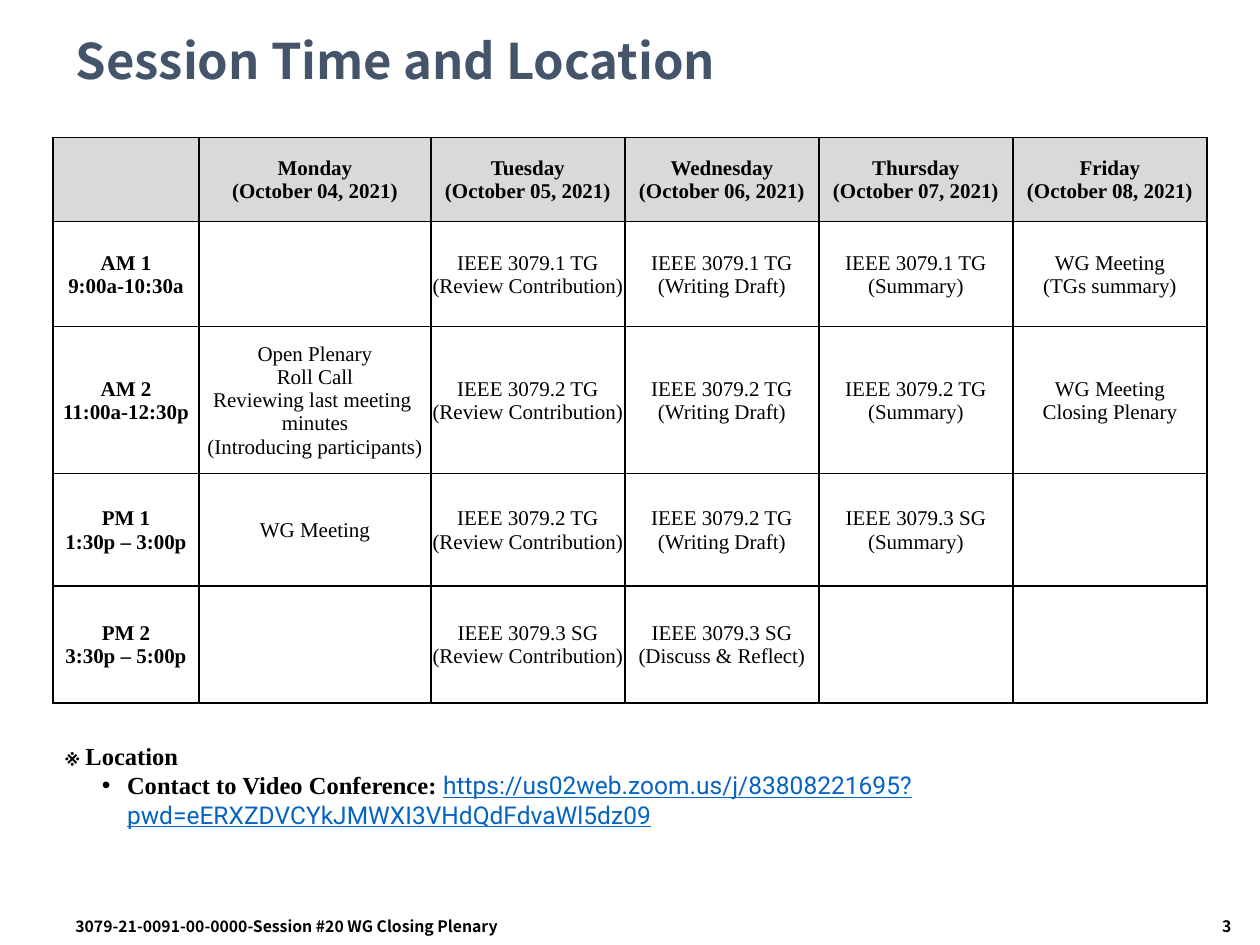
from lxml.etree import SubElement
from pptx import Presentation
from pptx.dml.color import RGBColor
from pptx.enum.text import MSO_ANCHOR, MSO_AUTO_SIZE, PP_ALIGN
from pptx.oxml.ns import qn
from pptx.util import Inches, Pt

SANS, SERIF = "Noto Sans CJK KR", "Times New Roman"


def style(font, name, size, color="000000", bold=True):
    font.name, font.size, font.bold = name, Pt(size), bold
    font.color.rgb = RGBColor.from_string(color)


def border(cell):
    """Draw a thin black line on all four sides."""
    props = cell._tc.get_or_add_tcPr()
    for side in ("lnL", "lnR", "lnT", "lnB"):
        line = SubElement(props, qn("a:" + side), w=str(Pt(1)))
        fill = SubElement(line, qn("a:solidFill"))
        SubElement(fill, qn("a:srgbClr"), val="000000")


deck = Presentation()
deck.slide_width, deck.slide_height = Inches(10), Inches(7.5)
slide = deck.slides.add_slide(deck.slide_layouts[5])

# Title
title = slide.shapes.title
title.left, title.top = Inches(0.5), Inches(0.17)
title.width, title.height = Inches(9), Inches(0.67)
frame = title.text_frame
frame.text = "Session Time and Location"
frame.auto_size = MSO_AUTO_SIZE.NONE
frame.vertical_anchor = MSO_ANCHOR.MIDDLE
para = frame.paragraphs[0]
para.alignment, para.line_spacing = PP_ALIGN.LEFT, 0.9
style(para.runs[0].font, SANS, 28, "44546A")

# Footer
footer = [
    (0.5, 4.42, PP_ALIGN.LEFT, "3079-21-0091-00-0000-Session #20 WG Closing Plenary"),
    (8.25, 1.62, PP_ALIGN.RIGHT, "3"),
]
for left, width, align, text in footer:
    box = slide.shapes.add_textbox(Inches(left), Inches(7.23), Inches(width), Inches(0.27))
    box.text_frame.word_wrap = True
    para = box.text_frame.paragraphs[0]
    para.text, para.alignment = text, align
    style(para.runs[0].font, SANS, 9)

# Location
box = slide.shapes.add_textbox(Inches(0.42), Inches(5.83), Inches(9.17), Inches(0.81))
frame = box.text_frame
frame.word_wrap = True
frame.auto_size = MSO_AUTO_SIZE.SHAPE_TO_FIT_TEXT
frame.text = "※ Location"
style(frame.paragraphs[0].runs[0].font, SERIF, 14)
para = frame.add_paragraph()
props = para._p.get_or_add_pPr()
props.set("marL", str(Inches(0.49)))
props.set("indent", str(Inches(-0.2)))
SubElement(props, qn("a:buFont"), typeface="Arial")
SubElement(props, qn("a:buChar"), char="•")
label, link = para.add_run(), para.add_run()
label.text = "Contact to Video Conference: "
style(label.font, SERIF, 14)
link.text = "https://us02web.zoom.us/j/83808221695?pwd=eERXZDVCYkJMWXI3VHdQdFdvaWl5dz09"
style(link.font, "Roboto", 14, "0563C1", False)
link.font.underline = True

# Timetable
days = ["Monday", "Tuesday", "Wednesday", "Thursday", "Friday"]
review, draft, recap = "(Review Contribution)", "(Writing Draft)", "(Summary)"
tg1, tg2, sg3 = "IEEE 3079.1 TG\n", "IEEE 3079.2 TG\n", "IEEE 3079.3 SG\n"
opening = ("Open Plenary\nRoll Call\nReviewing last meeting \vminutes\n"
           "(Introducing participants)")
rows = [
    [""] + [f"{day}\n(October {date:02}, 2021)" for date, day in enumerate(days, 4)],
    ["AM 1\n9:00a-10:30a", "", tg1 + review, tg1 + draft, tg1 + recap,
     "WG Meeting\n(TGs summary)"],
    ["AM 2\n11:00a-12:30p", opening, tg2 + review, tg2 + draft, tg2 + recap,
     "WG Meeting\nClosing Plenary"],
    ["PM 1\n1:30p – 3:00p", "WG Meeting", tg2 + review, tg2 + draft, sg3 + recap, ""],
    ["PM 2\n3:30p – 5:00p", "", sg3 + review, sg3 + "(Discuss & Reflect)", "", ""],
]
widths = [1.16, 1.84] + [1.54] * 4
heights = [0.67, 0.83, 1.17, 0.89, 0.93]
table = slide.shapes.add_table(len(rows), len(widths), Inches(0.42), Inches(1.09),
                               Inches(9.17), Inches(4.5)).table
table.first_row = table.horz_banding = False
for col, width in zip(table.columns, widths):
    col.width = Inches(width)
for row, height in zip(table.rows, heights):
    row.height = Inches(height)

for r, texts in enumerate(rows):
    for c, text in enumerate(texts):
        cell = table.cell(r, c)
        border(cell)
        if r == 0:
            cell.fill.solid()
            cell.fill.fore_color.rgb = RGBColor.from_string("D9D9D9")
        else:
            cell.fill.background()
        if not text:
            continue
        cell.vertical_anchor = MSO_ANCHOR.MIDDLE
        cell.margin_left = cell.margin_right = cell.margin_top = Inches(0.01)
        cell.margin_bottom = 0
        cell.text_frame.text = text
        for para in cell.text_frame.paragraphs:
            para.alignment = PP_ALIGN.CENTER
            for run in para.runs:
                style(run.font, SERIF, 12, bold=r == 0 or c == 0)

deck.save("out.pptx")
